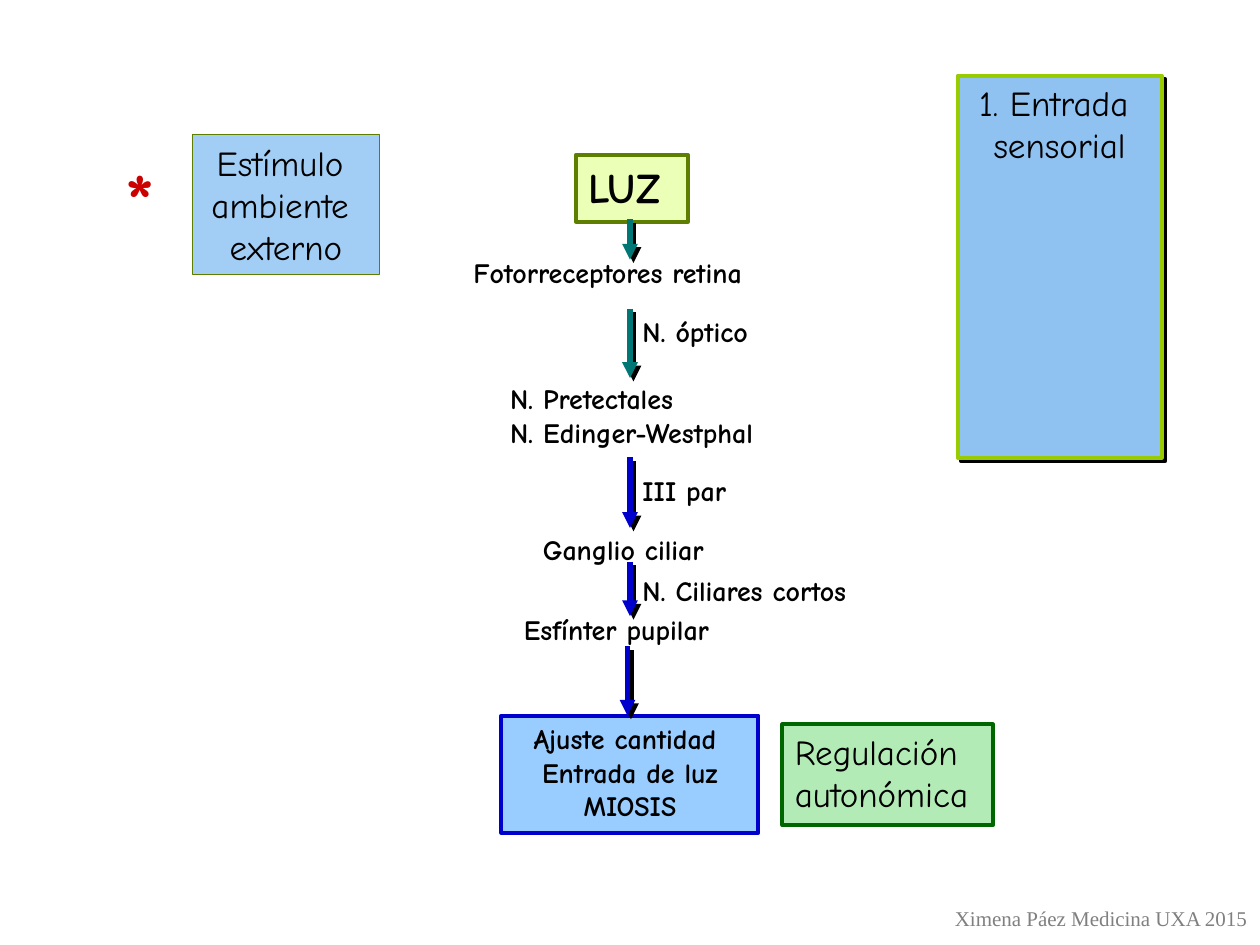
"""Build the slide on the pupillary light reflex pathway."""
import pptx
import pptx.util
import pptx.dml.color
import pptx.enum.shapes
import pptx.enum.text
import pptx.oxml
import pptx.oxml.ns

Inches = pptx.util.Inches
Pt = pptx.util.Pt
Align = pptx.enum.text.PP_ALIGN
NS = pptx.oxml.ns.nsdecls("a")
HEX = {
    "black": "000000", "red": "CC0000", "gray": "808080",
    "lime": "ECFFB7", "olive": "5D7E00", "sky": "99CCFF", "blue": "0000CC",
    "pale": "A2CDF4", "soft": "8FC2F1", "leaf": "99CC00",
    "mint": "B3EBB6", "green": "006600", "teal": "007774",
}
RGB = {name: pptx.dml.color.RGBColor.from_string(code) for name, code in HEX.items()}
SHADE = (f'<a:effectLst {NS}><a:outerShdw dist="35921" dir="2700000" algn="ctr" '
         'rotWithShape="0"><a:srgbClr val="000000"/></a:outerShdw></a:effectLst>')
FRAME = {
    "word_wrap": False,
    "auto_size": pptx.enum.text.MSO_AUTO_SIZE.SHAPE_TO_FIT_TEXT,
    "vertical_anchor": pptx.enum.text.MSO_ANCHOR.TOP,
}


def write(shape, text, size, bold=False, align=Align.LEFT, tint="black", face="Comic Neue"):
    frame = shape.text_frame
    frame.text = text
    for key, value in FRAME.items():
        setattr(frame, key, value)
    look = {"size": Pt(size), "bold": bold, "name": face}
    for para in frame.paragraphs:
        para.alignment = align
        for run in para.runs:
            run.font.color.rgb = RGB[tint]
            for key, value in look.items():
                setattr(run.font, key, value)


def paint(shape, fill, edge, width):
    shape.fill.solid()
    shape.fill.fore_color.rgb = RGB[fill]
    shape.line.color.rgb = RGB[edge]
    shape.line.width = Pt(width)


deck = pptx.Presentation()
deck.slide_width, deck.slide_height = Inches(10), Inches(7.5)
slide = deck.slides.add_slide(deck.slide_layouts[5])
shapes = slide.shapes

title = shapes.title
place = {"left": 7.6, "top": 0.6, "width": 1.62, "height": 0.8}
for key, value in place.items():
    setattr(title, key, Inches(value))
paint(title, "soft", "leaf", 2.25)
title.element.spPr.append(pptx.oxml.parse_xml(SHADE))
write(title, "1. Entrada \nsensorial", 20, align=Align.CENTER)

boxes = [
    ("LUZ", (4.57, 1.23, 0.89, 0.53), "lime", "olive", 2.25, 24, True, Align.LEFT),
    ("Ajuste cantidad \nEntrada de luz\nMIOSIS", (3.98, 5.68, 2.04, 0.93),
     "sky", "blue", 2.25, 16, True, Align.CENTER),
    ("Estímulo \nambiente \nexterno", (1.53, 1.07, 1.48, 1.11),
     "pale", "olive", 0.75, 20, False, Align.CENTER),
    ("Regulación\nautonómica", (6.21, 5.75, 1.67, 0.8),
     "mint", "green", 2.25, 20, False, Align.LEFT),
]
for text, area, fill, edge, width, size, bold, align in boxes:
    box = shapes.add_shape(pptx.enum.shapes.MSO_SHAPE.RECTANGLE, *map(Inches, area))
    paint(box, fill, edge, width)
    box.shadow.inherit = False
    write(box, text, size, bold, align)

steps = [
    ("Fotorreceptores retina", 3.66, 1.98, 2.67, 0.37),
    ("N. óptico", 5, 2.45, 1.21, 0.37),
    ("N. Pretectales\nN. Edinger-Westphal", 3.95, 2.98, 2.53, 0.64),
    ("III par", 5, 3.71, 1.01, 0.37),
    ("Ganglio ciliar", 4.21, 4.18, 1.58, 0.37),
    ("N. Ciliares cortos", 5, 4.5, 2.13, 0.37),
    ("Esfínter pupilar", 4.06, 4.81, 1.88, 0.37),
]
for text, *area in steps:
    write(shapes.add_textbox(*map(Inches, area)), text, 16, True)

arrows = [
    (5, 1.74, 2.06, "teal"), (5, 2.45, 3, "teal"), (5, 3.63, 4.19, "blue"),
    (5, 4.46, 4.89, "blue"), (4.98, 5.13, 5.68, "blue"),
]
for x, top, end, tint in arrows:
    arrow = shapes.add_connector(pptx.enum.shapes.MSO_CONNECTOR.STRAIGHT,
                                 *map(Inches, (x, top, x, end)))
    arrow.line.color.rgb = RGB[tint]
    arrow.line.width = Pt(3)
    props = arrow.element.spPr
    props.find(pptx.oxml.ns.qn("a:ln")).append(
        pptx.oxml.parse_xml(f'<a:tailEnd {NS} type="triangle"/>'))
    props.append(pptx.oxml.parse_xml(SHADE))

star = shapes.add_textbox(*map(Inches, (0.9, 1.15, 0.52, 0.83)))
write(star, "*", 44, True, tint="red")
fill = star.element.find(".//" + pptx.oxml.ns.qn("a:rPr")).find(pptx.oxml.ns.qn("a:solidFill"))
fill.addnext(pptx.oxml.parse_xml(SHADE))

foot = shapes.add_textbox(*map(Inches, (7.48, 7.14, 2.53, 0.3)))
write(foot, "Ximena Páez Medicina UXA 2015", 12, tint="gray", face="Times New Roman")

deck.save("out.pptx")
